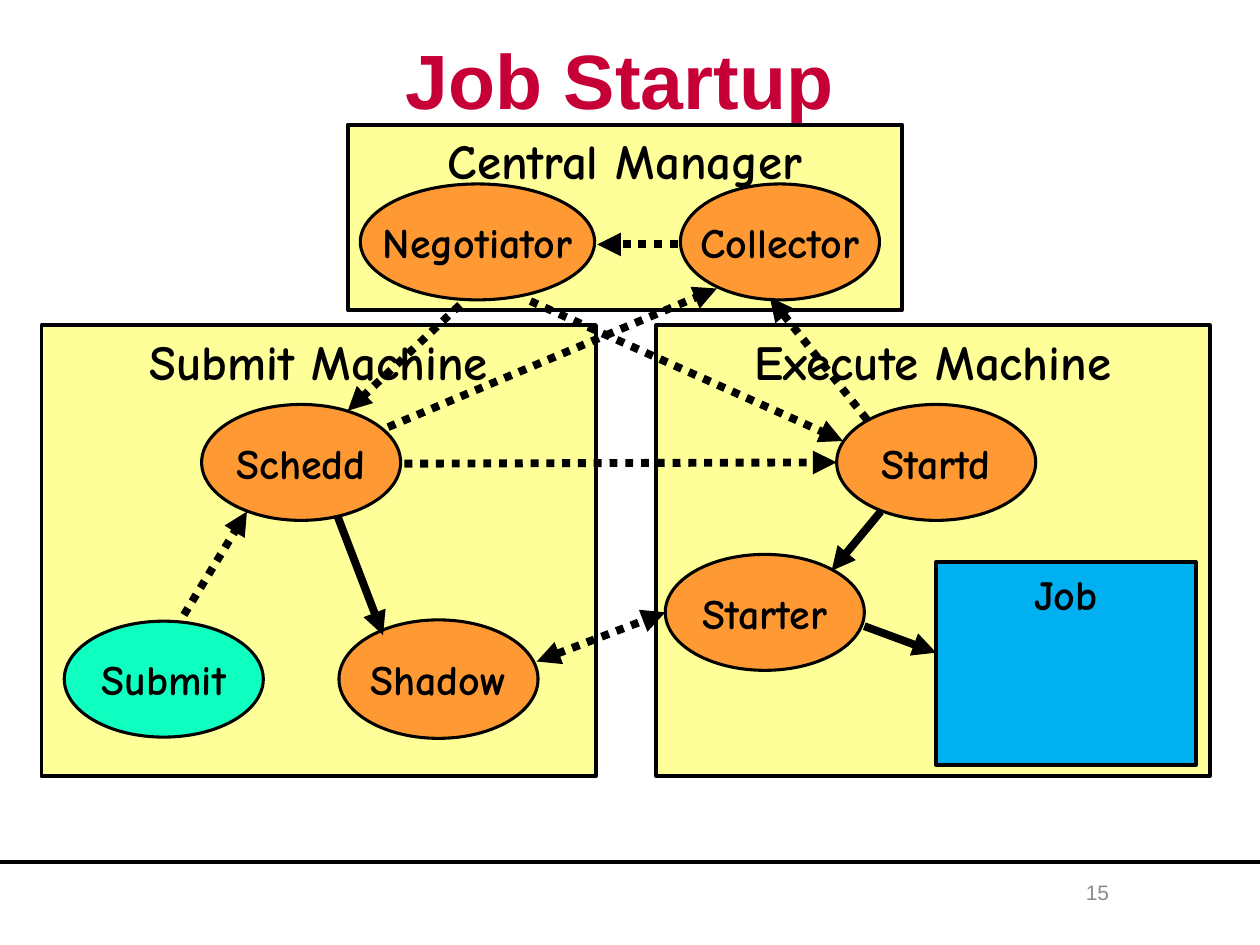
from dataclasses import dataclass

from pptx import Presentation
from pptx import util as u
from pptx.dml.color import RGBColor
from pptx.enum import dml, shapes, text
from pptx.oxml import ns
from lxml import etree

BLACK = RGBColor(0x00, 0x00, 0x00)
CRIMSON = RGBColor(0xC6, 0x00, 0x36)
GREY = RGBColor(0x8C, 0x8C, 0x8C)
YELLOW = RGBColor(0xFF, 0xFF, 0x99)
ORANGE = RGBColor(0xFF, 0x99, 0x33)
MINT = RGBColor(0x0F, 0xFF, 0xC0)
BLUE = RGBColor(0x00, 0xB0, 0xF0)

WIDTH, HEIGHT = u.Inches(10), u.Inches(7.5)
COLUMNS, ROWS = 100, 75
BODY_FONT = "Comic Neue"
TOP, MIDDLE = text.MSO_ANCHOR.TOP, text.MSO_ANCHOR.MIDDLE


@dataclass(frozen=True)
class Machine:
    label: str
    column: float
    row: float
    columns: float
    rows: float
    fill: RGBColor = YELLOW
    size: int = 28


@dataclass(frozen=True)
class Daemon:
    label: str
    column: float
    row: float
    columns: float = 15.8
    rows: float = 9.2
    fill: RGBColor = ORANGE


@dataclass(frozen=True)
class Arrow:
    start: tuple[float, float]
    end: tuple[float, float]
    dotted: bool = True
    both_ends: bool = False


MACHINES = [
    Machine("Execute Machine", 52.1, 25.8, 43.9, 35.8),
    Machine("Submit Machine", 3.3, 25.8, 44, 35.8),
    Machine("Central Manager", 27.6, 9.9, 44, 14.7),
    Machine("Job", 74.3, 44.6, 20.6, 16.1, fill=BLUE, size=24),
]

DAEMONS = [
    Daemon("Submit", 5.1, 49.3, fill=MINT),
    Daemon("Schedd", 16, 32.1),
    Daemon("Starter", 52.8, 44),
    Daemon("Shadow", 26.9, 49.2, rows=9.4),
    Daemon("Startd", 66.4, 32.1),
    Daemon("Collector", 54, 14.6),
    Daemon("Negotiator", 28.6, 14.6, columns=18.6),
]

ARROWS = [
    Arrow((14.6, 48.8), (19.6, 40.6)),  # Submit to Schedd
    Arrow((32.1, 36.8), (66.4, 36.7)),  # Schedd to Startd
    Arrow((69.9, 40.6), (66, 45.3), dotted=False),  # Startd to Starter
    Arrow((68.6, 49.7), (74.3, 51.8), dotted=False),  # Starter to Job
    Arrow((26.8, 41), (30.4, 50.4), dotted=False),  # Schedd to Shadow
    Arrow((42.6, 52.5), (52.8, 48.6), both_ends=True),  # Shadow and Starter
    Arrow((30.8, 33.9), (56.9, 22.9)),  # Schedd to Collector
    Arrow((68.8, 33.3), (61.1, 23.6)),  # Startd to Collector
    Arrow((53.8, 19.4), (47.4, 19.4)),  # Collector to Negotiator
    Arrow((36.5, 24.2), (27.6, 32.6)),  # Negotiator to Schedd
    Arrow((42.1, 23.9), (66.9, 35)),  # Negotiator to Startd
]


def across(columns: float) -> int:
    return round(WIDTH * columns / COLUMNS)


def down(rows: float) -> int:
    return round(HEIGHT * rows / ROWS)


def area(column: float, row: float, columns: float, rows: float) -> tuple[int, ...]:
    return across(column), down(row), across(columns), down(rows)


def write(box, words: str, *, size: int, font: str = BODY_FONT, color: RGBColor = BLACK,
          bold: bool = True, anchor=MIDDLE, wrap: bool = False) -> None:
    frame = box.text_frame
    frame.word_wrap = wrap
    frame.vertical_anchor = anchor
    para = frame.paragraphs[0]
    para.alignment = text.PP_ALIGN.CENTER
    span = para.add_run()
    span.text = words
    span.font.name = font
    span.font.size = u.Pt(size)
    span.font.bold = bold
    span.font.color.rgb = color


def draw_part(page, part: Machine | Daemon, preset, outline: float):
    box = page.shapes.add_shape(
        preset, *area(part.column, part.row, part.columns, part.rows))
    box.shadow.inherit = False
    box.fill.solid()
    box.fill.fore_color.rgb = part.fill
    box.line.color.rgb = BLACK
    box.line.width = u.Pt(outline)
    return box


def draw_machine(page, machine: Machine) -> None:
    box = draw_part(page, machine, shapes.MSO_SHAPE.RECTANGLE, 2.25)
    write(box, machine.label, size=machine.size, anchor=TOP)


def draw_daemon(page, daemon: Daemon) -> None:
    box = draw_part(page, daemon, shapes.MSO_SHAPE.OVAL, 1.75)
    write(box, daemon.label, size=24)


def draw_line(page, start: tuple[float, float], end: tuple[float, float], width: float):
    line = page.shapes.add_connector(
        shapes.MSO_CONNECTOR.STRAIGHT,
        across(start[0]), down(start[1]), across(end[0]), down(end[1]))
    line.line.color.rgb = BLACK
    line.line.width = u.Pt(width)
    etree.SubElement(line._element.spPr, ns.qn("a:effectLst"))
    return line


def draw_arrow(page, arrow: Arrow) -> None:
    line = draw_line(page, arrow.start, arrow.end, 4.5)
    if arrow.dotted:
        line.line.dash_style = dml.MSO_LINE.ROUND_DOT
    outline = line._element.spPr.find(ns.qn("a:ln"))
    for tag in ["a:headEnd"] * arrow.both_ends + ["a:tailEnd"]:
        etree.SubElement(outline, ns.qn(tag), type="triangle")


def main() -> None:
    deck = Presentation()
    deck.slide_width, deck.slide_height = WIDTH, HEIGHT
    page = deck.slides.add_slide(deck.slide_layouts.get_by_name("Title Only"))

    draw_line(page, (0, 68.4), (COLUMNS, 68.4), 2.25)
    number = page.shapes.add_textbox(*area(81.7, 68.3, 10.8, 5))
    write(number, "15", size=12, font="Arial", color=GREY, bold=False, wrap=True)

    title = page.shapes.title
    title.left, title.top, title.width, title.height = area(6.7, 0, 85, 12.5)
    write(title, "Job Startup", size=44, font="Arial", color=CRIMSON, wrap=True)

    for machine in MACHINES:
        draw_machine(page, machine)
    for daemon in DAEMONS:
        draw_daemon(page, daemon)
    for arrow in ARROWS:
        draw_arrow(page, arrow)
    deck.save("out.pptx")


if __name__ == "__main__":
    main()
